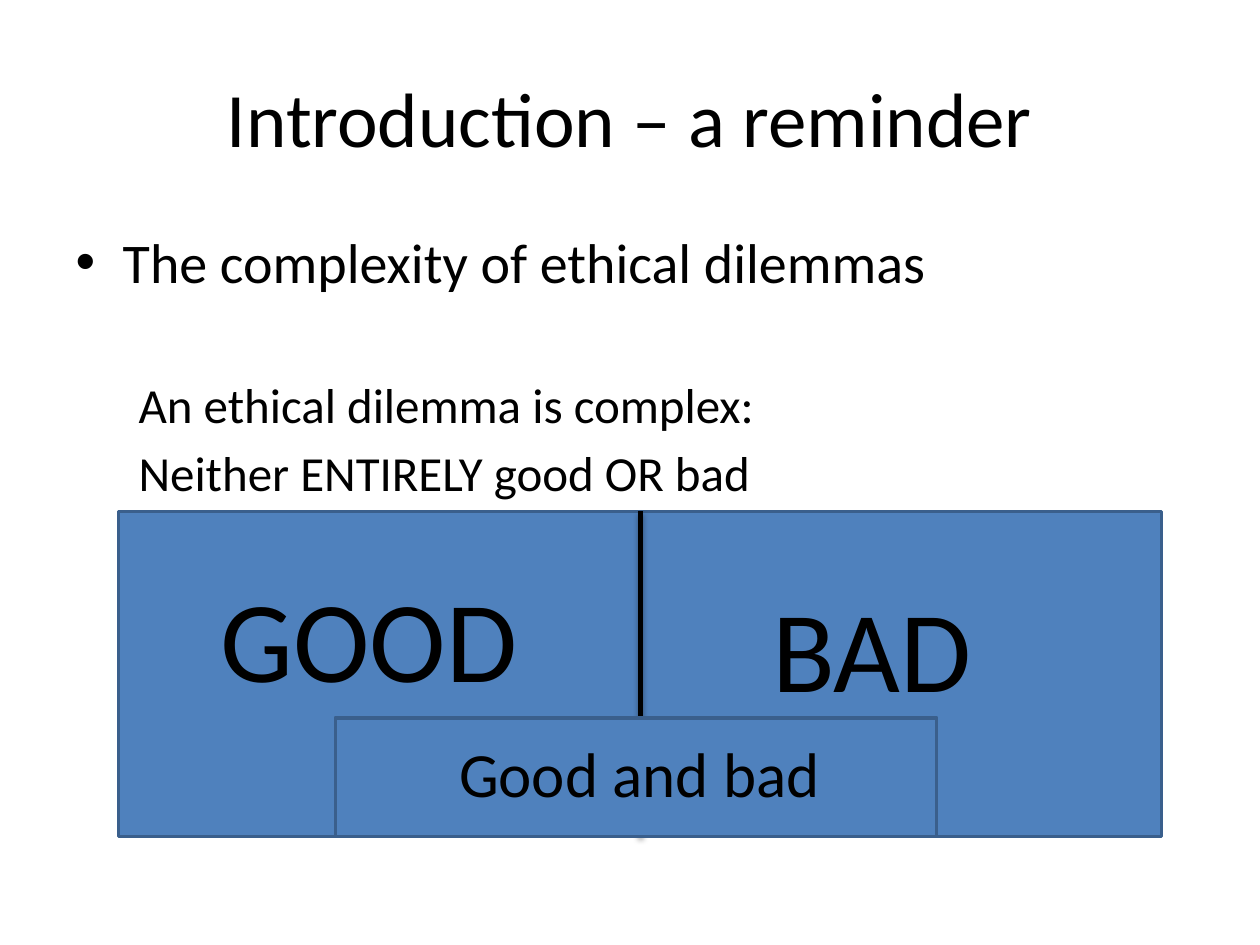
from lxml.etree import SubElement
from pptx import Presentation
from pptx.dml.color import RGBColor
from pptx.enum.shapes import MSO_CONNECTOR, MSO_SHAPE
from pptx.enum.text import MSO_ANCHOR, MSO_AUTO_SIZE, PP_ALIGN
from pptx.oxml.ns import qn
from pptx.util import Cm, Pt

BLACK = RGBColor(0x00, 0x00, 0x00)
BLUE = RGBColor(0x4F, 0x81, 0xBD)
DARK_BLUE = RGBColor(0x3A, 0x5F, 0x8C)
FONT = "Calibri"


def place(shape, left, top, width, height):
    box = {"left": left, "top": top, "width": width, "height": height}
    for name, value in box.items():
        setattr(shape, name, Cm(value))


def write(paragraph, text, size, **paragraph_format):
    run = paragraph.add_run()
    run.text = text
    for name, value in {"name": FONT, "size": Pt(size)}.items():
        setattr(run.font, name, value)
    run.font.color.rgb = BLACK
    for name, value in paragraph_format.items():
        setattr(paragraph, name, value)


def set_bullet(paragraph, margin, indent, character=None):
    properties = paragraph._p.get_or_add_pPr()
    properties.set("marL", str(Cm(margin)))
    properties.set("indent", str(Cm(indent)))
    if character:
        SubElement(properties, qn("a:buChar"), char=character)
    else:
        SubElement(properties, qn("a:buNone"))


def add_rectangle(slide, *box):
    shape = slide.shapes.add_shape(MSO_SHAPE.RECTANGLE, *map(Cm, box))
    shape.shadow.inherit = False
    shape.fill.solid()
    shape.fill.fore_color.rgb = BLUE
    shape.line.color.rgb = DARK_BLUE
    shape.line.width = Pt(2)
    return shape


def add_divider(slide, rectangle):
    connector = slide.shapes.add_connector(MSO_CONNECTOR.STRAIGHT, 0, 0, 0, 0)
    connector.begin_connect(rectangle, 0)
    connector.end_connect(rectangle, 2)
    connector.line.color.rgb = BLACK
    connector.line.width = Pt(3)
    # Soft shadow straight below the line
    effects = SubElement(connector._element.spPr, qn("a:effectLst"))
    shadow = SubElement(effects, qn("a:outerShdw"), blurRad=str(Pt(3.1)),
                        dist=str(Pt(1.8)), dir="5400000", rotWithShape="0")
    color = SubElement(shadow, qn("a:srgbClr"), val=str(BLACK))
    SubElement(color, qn("a:alpha"), val="35000")


def add_label(slide, text, size, *box):
    frame = slide.shapes.add_textbox(*map(Cm, box)).text_frame
    frame.word_wrap = True
    frame.auto_size = MSO_AUTO_SIZE.SHAPE_TO_FIT_TEXT
    write(frame.paragraphs[0], text, size, alignment=PP_ALIGN.CENTER)


def fill_title(title):
    place(title, 1.27, 0.76, 22.86, 3.18)
    title.text_frame.vertical_anchor = MSO_ANCHOR.MIDDLE
    write(title.text_frame.paragraphs[0], "Introduction – a reminder", 44,
          alignment=PP_ALIGN.CENTER)


def fill_body(body):
    place(body, 1.27, 4.45, 22.86, 12.57)
    frame = body.text_frame
    heading = frame.paragraphs[0]
    write(heading, "The complexity of ethical dilemmas", 32, space_before=Pt(6.4))
    set_bullet(heading, 0.95, -0.95, "•")
    # The first line stands well apart from the heading
    lines = [("An ethical dilemma is complex:", 45.6),
             ("Neither ENTIRELY good OR bad", 5.6)]
    for text, gap in lines:
        paragraph = frame.add_paragraph()
        write(paragraph, text, 28, level=1, space_before=Pt(gap))
        set_bullet(paragraph, 2.69, -1.42)


def main():
    presentation = Presentation()
    presentation.slide_width, presentation.slide_height = Cm(25.4), Cm(19.05)
    slide = presentation.slides.add_slide(presentation.slide_layouts[1])

    # Title and list
    fill_title(slide.shapes.title)
    fill_body(slide.placeholders[1])

    # Good and bad halves
    halves = add_rectangle(slide, 2.39, 10.31, 21.03, 6.55)
    add_divider(slide, halves)
    add_label(slide, "GOOD", 66, 2.97, 11.3, 8.94, 3.07)
    add_label(slide, "BAD", 66, 13.11, 11.51, 8.94, 3.07)

    # Overlap of both
    add_rectangle(slide, 6.76, 14.47, 12.12, 2.39)
    add_label(slide, "Good and bad", 36, 8.94, 14.68, 7.9, 1.8)

    presentation.save("out.pptx")


if __name__ == "__main__":
    main()
